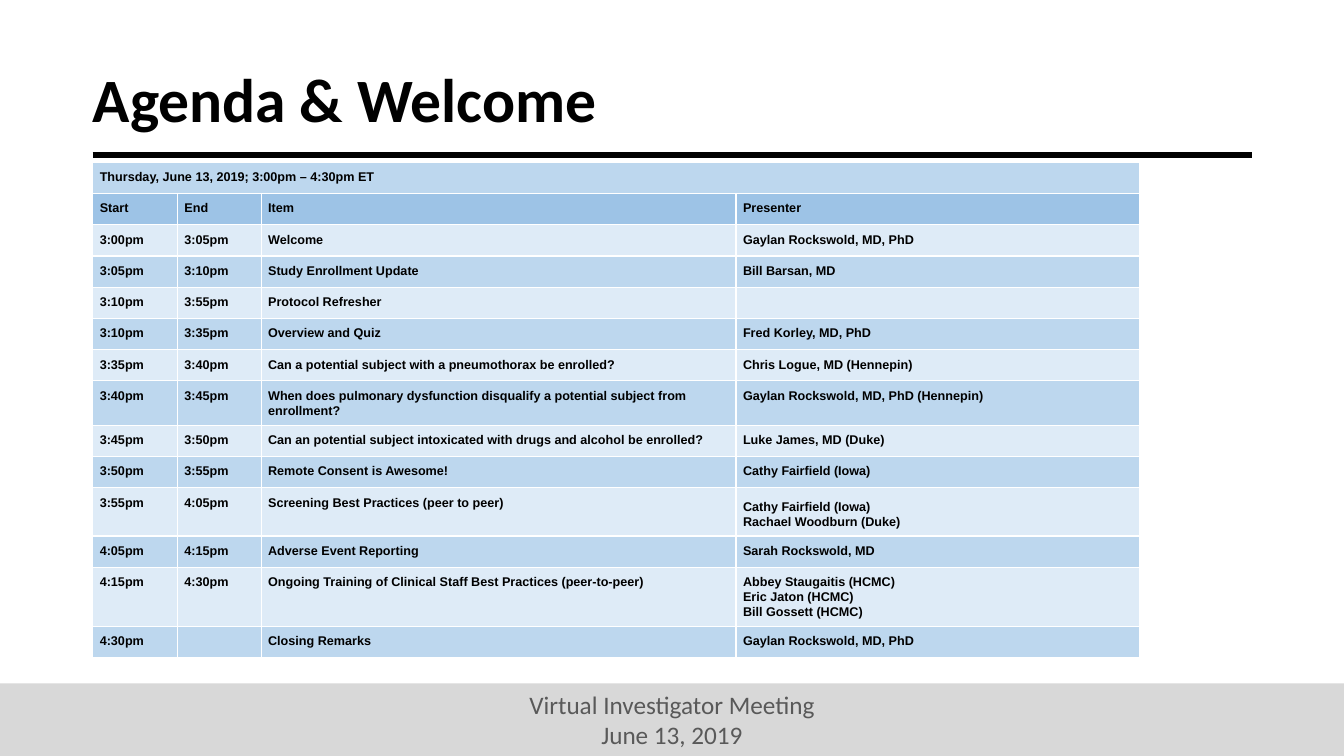
from lxml import etree
from pptx import Presentation
from pptx import util as u
from pptx.dml.color import RGBColor
from pptx.enum import shapes, text
from pptx.oxml.ns import qn

TITLE = "Agenda & Welcome"
FOOTER = "Virtual Investigator Meeting\nJune 13, 2019"
AGENDA = [
    ("Thursday, June 13, 2019; 3:00pm – 4:30pm ET", "", "", ""),
    ("Start", "End", "Item", "Presenter"),
    ("3:00pm", "3:05pm", "Welcome", "Gaylan Rockswold, MD, PhD"),
    ("3:05pm", "3:10pm", "Study Enrollment Update", "Bill Barsan, MD"),
    ("3:10pm", "3:55pm", "Protocol Refresher", ""),
    ("3:10pm", "3:35pm", "Overview and Quiz", "Fred Korley, MD, PhD"),
    ("3:35pm", "3:40pm", "Can a potential subject with a pneumothorax be enrolled?",
     "Chris Logue, MD (Hennepin)"),
    ("3:40pm", "3:45pm",
     "When does pulmonary dysfunction disqualify a potential subject from enrollment?",
     "Gaylan Rockswold, MD, PhD (Hennepin)"),
    ("3:45pm", "3:50pm",
     "Can an potential subject intoxicated with drugs and alcohol be enrolled?",
     "Luke James, MD (Duke)"),
    ("3:50pm", "3:55pm", "Remote Consent is Awesome!", "Cathy Fairfield (Iowa)"),
    ("3:55pm", "4:05pm", "Screening Best Practices (peer to peer)",
     "Cathy Fairfield (Iowa)\nRachael Woodburn (Duke)"),
    ("4:05pm", "4:15pm", "Adverse Event Reporting", "Sarah Rockswold, MD"),
    ("4:15pm", "4:30pm", "Ongoing Training of Clinical Staff Best Practices (peer‐to‐peer)",
     "Abbey Staugaitis (HCMC)\nEric Jaton (HCMC)\nBill Gossett (HCMC)"),
    ("4:30pm", "", "Closing Remarks", "Gaylan Rockswold, MD, PhD"),
]
BOTTOM_ANCHORED = (10, 3)

BLACK = RGBColor(0x00, 0x00, 0x00)
GREY_TEXT = RGBColor(0x59, 0x59, 0x59)
GREY_BAND = RGBColor(0xD8, 0xD8, 0xD8)
HEADER_BLUE = RGBColor(0x9D, 0xC3, 0xE6)
BAND_BLUES = (RGBColor(0xBD, 0xD7, 0xEE), RGBColor(0xDE, 0xEB, 0xF7))

WIDTH, HEIGHT = 13.33, 7.5
LEFT, RULE_Y, RULE_RIGHT = 0.92, 1.54, 12.42
TABLE_TOP, CELL_INSET = 1.61, 0.07
COLUMNS = (0.84, 0.83, 4.71, 4)
ROW, TALL_ROW = 0.31, 0.48
FOOTER_HEIGHT = 0.72


def style(tf, font, size, color, bold=False, align=None, spacing=None):
    for p in tf.paragraphs:
        p.alignment = align
        p.line_spacing = spacing
        for r in p.runs:
            r.font.name, r.font.size, r.font.bold = font, u.Pt(size), bold
            r.font.color.rgb = color
        if not p.runs:  # keeps an empty cell from growing its row
            etree.SubElement(p._p, qn("a:endParaRPr"), sz=str(size * 100))


def set_margins(frame, inset):
    frame.margin_left = frame.margin_right = u.Inches(inset)
    frame.margin_top = frame.margin_bottom = u.Inches(inset)


def add_title(slide):
    sp = slide.shapes.title
    sp.left, sp.top = u.Inches(0.82), u.Inches(0.29)
    sp.width, sp.height = u.Inches(sum(COLUMNS)), u.Inches(1.45)
    tf = sp.text_frame
    tf.text = TITLE
    tf.vertical_anchor = text.MSO_ANCHOR.MIDDLE
    set_margins(tf, 0.1)
    style(tf, "Calibri", 44, BLACK, True, text.PP_ALIGN.LEFT, 0.9)


def add_rule(slide):
    line = slide.shapes.add_connector(
        shapes.MSO_CONNECTOR.STRAIGHT, u.Inches(LEFT), u.Inches(RULE_Y),
        u.Inches(RULE_RIGHT), u.Inches(RULE_Y))
    line.line.color.rgb = BLACK
    line.line.width = u.Pt(4.5)
    etree.SubElement(line._element.spPr, qn("a:effectLst"))


def add_footer(slide):
    sp = slide.shapes.add_shape(
        shapes.MSO_SHAPE.RECTANGLE, 0, u.Inches(HEIGHT - FOOTER_HEIGHT),
        u.Inches(WIDTH), u.Inches(FOOTER_HEIGHT))
    sp.shadow.inherit = False
    sp.fill.solid()
    sp.fill.fore_color.rgb = GREY_BAND
    sp.line.fill.background()
    tf = sp.text_frame
    tf.text = FOOTER
    tf.vertical_anchor = text.MSO_ANCHOR.MIDDLE
    style(tf, "Calibri", 18, GREY_TEXT, align=text.PP_ALIGN.CENTER)


def add_agenda(slide):
    heights = [TALL_ROW if "\n" in row[-1] else ROW for row in AGENDA]
    table = slide.shapes.add_table(
        len(AGENDA), len(COLUMNS), u.Inches(LEFT), u.Inches(TABLE_TOP),
        u.Inches(sum(COLUMNS)), u.Inches(sum(heights))).table
    for column, width in zip(table.columns, COLUMNS):
        column.width = u.Inches(width)
    for i, (row, height) in enumerate(zip(AGENDA, heights)):
        table.rows[i].height = u.Inches(height)
        for j, words in enumerate(row):
            cell = table.cell(i, j)
            cell.text = words
            set_margins(cell, CELL_INSET)
            cell.fill.solid()
            cell.fill.fore_color.rgb = HEADER_BLUE if i == 1 else BAND_BLUES[(i + 1) % 2 if i else 0]
            style(cell.text_frame, "Arial", 9, BLACK, True, spacing=1.07)
    table.cell(*BOTTOM_ANCHORED).vertical_anchor = text.MSO_ANCHOR.BOTTOM
    table.cell(0, 0).merge(table.cell(0, len(COLUMNS) - 1))


def main():
    prs = Presentation()
    prs.slide_width, prs.slide_height = u.Inches(WIDTH), u.Inches(HEIGHT)
    slide = prs.slides.add_slide(prs.slide_layouts[5])
    add_rule(slide)
    add_footer(slide)
    add_title(slide)
    add_agenda(slide)
    prs.save("out.pptx")


if __name__ == "__main__":
    main()
